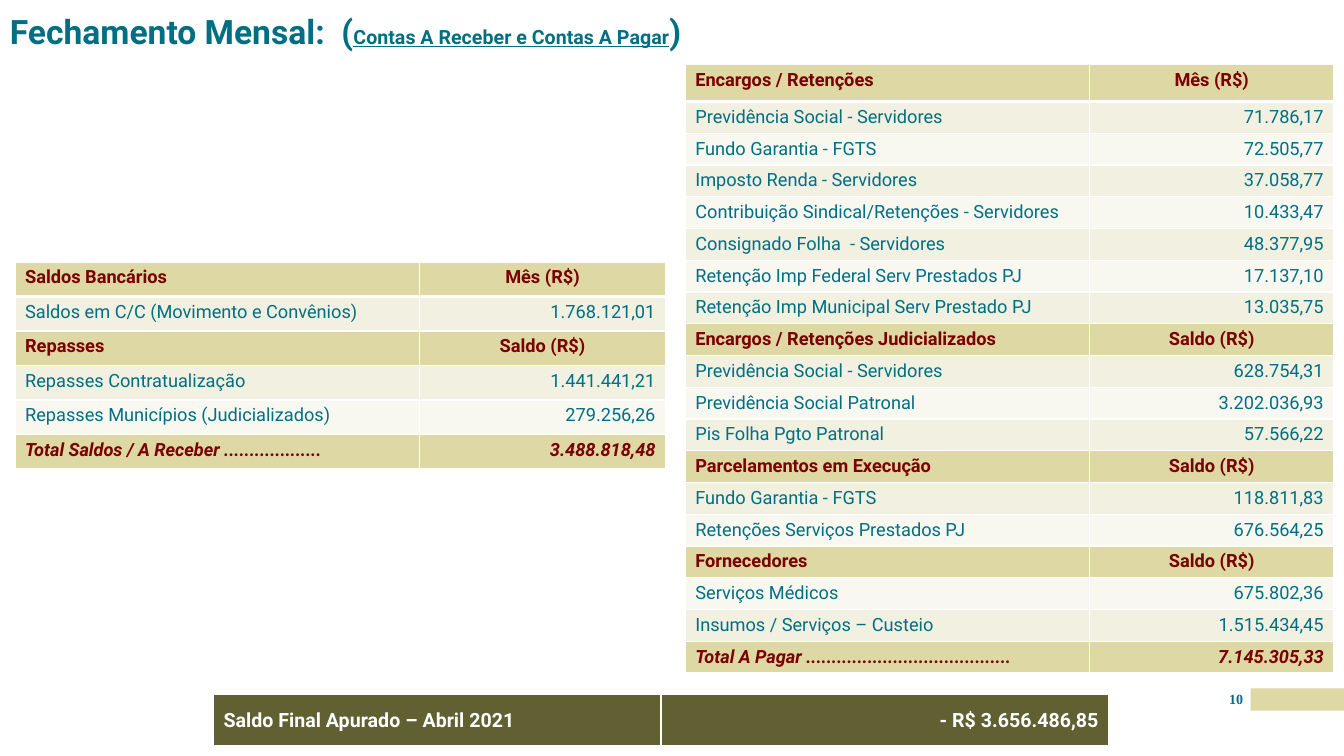
from pptx import Presentation
from pptx.dml.color import RGBColor
from pptx.enum.shapes import MSO_SHAPE
from pptx.enum.text import MSO_ANCHOR, MSO_AUTO_SIZE, PP_ALIGN
from pptx.oxml import parse_xml
from pptx.oxml.ns import nsdecls
from pptx.util import Cm, Pt

COLORS = {
    "teal": "006F83", "wine": "7A0000", "sand": "DED8A4", "olive": "606032",
    "odd": "F2F0E0", "even": "F9F8F0", "white": "FFFFFF",
}
LEFT, CENTER, RIGHT = PP_ALIGN.LEFT, PP_ALIGN.CENTER, PP_ALIGN.RIGHT

RECEIVABLES = [
    ("Saldos Bancários", "Mês (R$)"),
    ("Saldos em C/C (Movimento e Convênios)", "1.768.121,01"),
    ("Repasses", "Saldo (R$)"),
    ("Repasses Contratualização", "1.441.441,21"),
    ("Repasses Municípios (Judicializados)", "279.256,26"),
    ("Total Saldos / A Receber ...................", "3.488.818,48"),
]
PAYABLES = [
    ("Encargos / Retenções", "Mês (R$)"),
    ("Previdência Social - Servidores", "71.786,17"),
    ("Fundo Garantia - FGTS", "72.505,77"),
    ("Imposto Renda - Servidores", "37.058,77"),
    ("Contribuição Sindical/Retenções - Servidores", "10.433,47"),
    ("Consignado Folha  - Servidores", "48.377,95"),
    ("Retenção Imp Federal Serv Prestados PJ", "17.137,10"),
    ("Retenção Imp Municipal Serv Prestado PJ", "13.035,75"),
    ("Encargos / Retenções Judicializados", "Saldo (R$)"),
    ("Previdência Social - Servidores", "628.754,31"),
    ("Previdência Social Patronal", "3.202.036,93"),
    ("Pis Folha Pgto Patronal", "57.566,22"),
    ("Parcelamentos em Execução", "Saldo (R$)"),
    ("Fundo Garantia - FGTS", "118.811,83"),
    ("Retenções Serviços Prestados PJ", "676.564,25"),
    ("Fornecedores", "Saldo (R$)"),
    ("Serviços Médicos", "675.802,36"),
    ("Insumos / Serviços – Custeio", "1.515.434,45"),
    ("Total A Pagar ........................................", "7.145.305,33"),
]


class Deck:
    """Holds the style and the current slide, with a method per kind of element."""

    font = "Roboto"

    def __init__(self, width, height):
        self.prs = Presentation()
        self.prs.slide_width, self.prs.slide_height = Cm(width), Cm(height)
        self.s = self.prs.slides.add_slide(self.prs.slide_layouts[5])

    def rgb(self, color):
        return RGBColor.from_string(COLORS[color])

    def run(self, p, text, size, color="teal", **fmt):
        r = p.add_run()
        r.text = text
        r.font.color.rgb = self.rgb(color)
        for name, value in {"name": self.font, "size": Pt(size), "bold": True, **fmt}.items():
            setattr(r.font, name, value)

    def frame(self, sp, align):
        tf = sp.text_frame
        fmt = {"margin_left": 0, "margin_top": 0, "margin_right": 0, "margin_bottom": 0,
               "word_wrap": True, "auto_size": MSO_AUTO_SIZE.NONE,
               "vertical_anchor": MSO_ANCHOR.TOP}
        for name, value in fmt.items():
            setattr(tf, name, value)
        p = tf.paragraphs[0]
        p.alignment = align
        return p

    def title(self, box, runs):
        sp = self.s.shapes.title
        for name, value in zip(("left", "top", "width", "height"), box):
            setattr(sp, name, Cm(value))
        p = self.frame(sp, LEFT)
        p.line_spacing = 0.9
        for text, size, underline in runs:
            self.run(p, text, size, underline=underline)

    def text(self, box, text, size, **fmt):
        sp = self.s.shapes.add_textbox(*map(Cm, box))
        self.run(self.frame(sp, CENTER), text, size, **fmt)

    def bar(self, box, color):
        sp = self.s.shapes.add_shape(MSO_SHAPE.RECTANGLE, *map(Cm, box))
        sp.shadow.inherit = False
        sp.fill.solid()
        sp.fill.fore_color.rgb = self.rgb(color)
        sp.line.fill.background()

    def borders(self, cell, bottom):
        tcPr = cell._tc.get_or_add_tcPr()
        for i, (side, width) in enumerate(zip("LRTB", (1, 1, 1, bottom))):
            tcPr.insert(i, parse_xml(
                f'<a:ln{side} {nsdecls("a")} w="{Pt(width)}"><a:solidFill>'
                f'<a:srgbClr val="{COLORS["white"]}"/></a:solidFill></a:ln{side}>'))

    def cell(self, cell, text, align, fill, size, bottom, **fmt):
        cell.fill.solid()
        cell.fill.fore_color.rgb = self.rgb(fill)
        self.borders(cell, bottom)
        p = cell.text_frame.paragraphs[0]
        p.alignment = align
        self.run(p, text, size, **fmt)

    def table(self, left, top, cols, heights, rows, size=13, banner=False):
        tbl = self.s.shapes.add_table(len(rows), len(cols), Cm(left), Cm(top),
                                      Cm(sum(cols)), Cm(sum(heights))).table
        for col, width in zip(tbl.columns, cols):
            col.width = Cm(width)
        for i, (values, height) in enumerate(zip(rows, heights)):
            tbl.rows[i].height = Cm(height)
            section, total = values[1].endswith("(R$)"), values[0].startswith("Total")
            strong = section or total
            fill, color = ("sand", "wine") if strong else ("odd" if i % 2 else "even", "teal")
            if banner:
                fill, color = "olive", "white"
            for j, align in enumerate((LEFT, CENTER if section else RIGHT)):
                cell = tbl.cell(i, j)
                cell.vertical_anchor = MSO_ANCHOR.MIDDLE if banner else MSO_ANCHOR.TOP
                self.cell(cell, values[j], align, fill, size, 1 if i else 3,
                          color=color, bold=strong or banner, italic=total)


def main():
    deck = Deck(33.87, 19.05)
    deck.bar((31.52, 17.35, 2.35, 0.56), "sand")
    deck.text((30.78, 17.4, 0.74, 0.64), "10", 10, name="Times New Roman")
    deck.title((0.25, 0.38, 33.05, 1.27), [
        ("Fechamento Mensal:  (", 24, False),
        ("Contas A Receber e Contas A Pagar", 14, True),
        (")", 24, False),
    ])
    deck.table(17.27, 1.63, (10.19, 6.15), [0.93] + [0.8] * 18, PAYABLES)
    deck.table(0.38, 6.6, (10.19, 6.2), [0.87] * 6, RECEIVABLES)
    deck.table(5.38, 17.5, (11.28, 11.28), [1.32],
               [("Saldo Final Apurado – Abril 2021", "- R$ 3.656.486,85")],
               size=14, banner=True)
    deck.prs.save("out.pptx")


if __name__ == "__main__":
    main()
